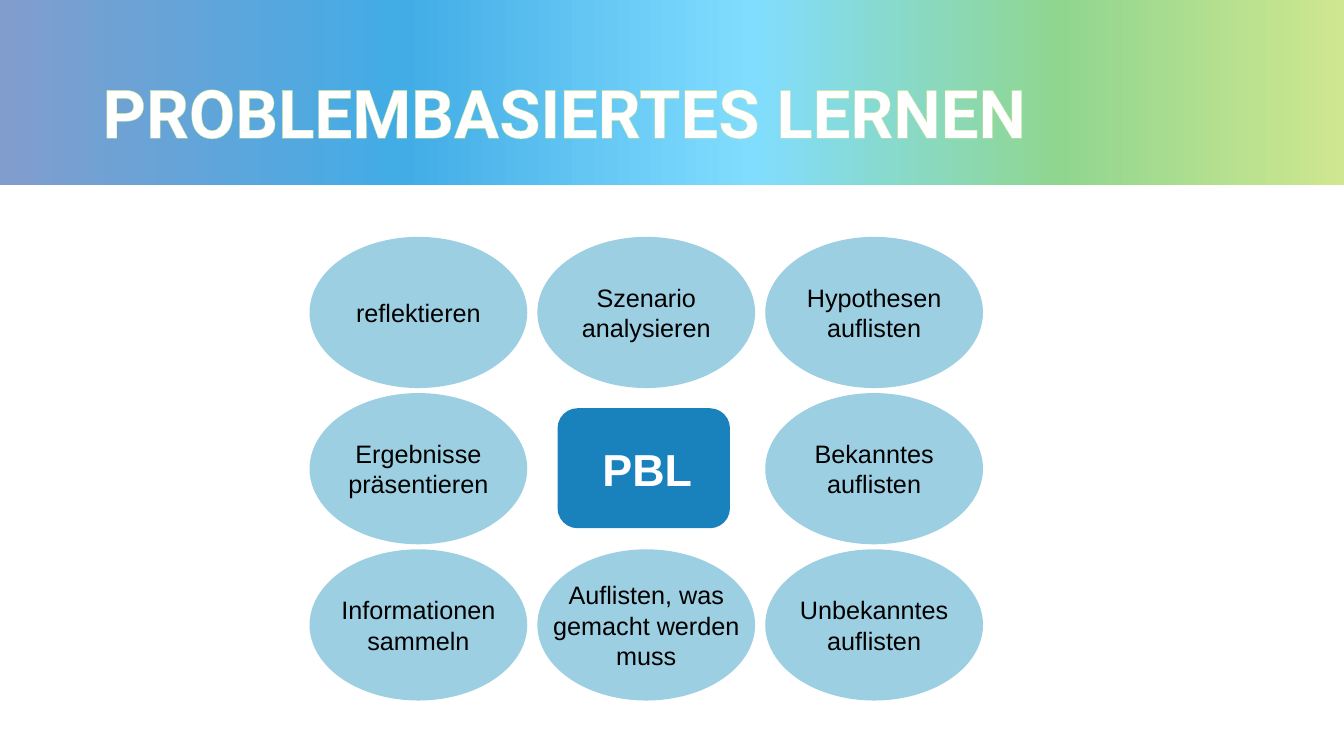
from lxml import etree
from pptx import Presentation
from pptx.dml.color import RGBColor
from pptx.enum.shapes import MSO_SHAPE as Shape
from pptx.enum.text import MSO_ANCHOR as Anchor, MSO_AUTO_SIZE as AutoSize, PP_ALIGN as Align
from pptx.oxml.ns import qn
from pptx.util import Inches, Pt

COLORS = {"white": "FFFFFF", "black": "000000", "center": "1982BD",
          "step": "9DCFE2", "outline": "BFE38F"}
BANNER_STOPS = [(0, "819DCD"), (30, "42ACE6"), (56, "81DDFF"),
                (79, "90D68F"), (100, "CFE78F")]
FORMATS = {
    "title": {"name": "Roboto", "size": Pt(48), "bold": True, "color": "white"},
    "center": {"name": "Arial", "size": Pt(32), "bold": True, "color": "white"},
    "step": {"name": "Arial", "size": Pt(18), "bold": False, "color": "black"},
}
STEPS = [
    (1, 0, "Szenario analysieren", 1.87, 0.71),
    (2, 0, "Hypothesen auflisten", 1.87, 0.71),
    (2, 1, "Bekanntes auflisten", 1.87, 0.71),
    (2, 2, "Unbekanntes auflisten", 1.87, 0.71),
    (1, 2, "Auflisten, was gemacht werden muss", 2.09, 1.01),
    (0, 2, "Informationen sammeln", 1.87, 0.71),
    (0, 1, "Ergebnisse präsentieren", 1.87, 0.71),
    (0, 0, "reflektieren", 1.87, 0.4),
]
GRID_LEFT, GRID_TOP, COLUMN_STEP, ROW_STEP = 3.07, 2.35, 2.26, 1.55
OVAL_WIDTH, OVAL_HEIGHT = 2.16, 1.5


class SlideBuilder:
    """Draw banner, title and labelled shapes on one slide in a shared style."""

    def __init__(self, slide):
        self.slide = slide

    def shape(self, shapes, kind, box):
        shape = shapes.add_shape(kind, *map(Inches, box))
        shape.shadow.inherit = False
        shape.line.fill.background()
        return shape

    def banner(self, box, stops):
        shape = self.shape(self.slide.shapes, Shape.RECTANGLE, box)
        shape.fill.gradient()
        shape.fill.gradient_angle = 0
        stop_list = next(shape.element.iter(qn("a:gsLst")))
        for old_stop in list(stop_list):
            stop_list.remove(old_stop)
        for position, color in stops:
            stop = etree.SubElement(stop_list, qn("a:gs"), pos=str(position * 1000))
            etree.SubElement(stop, qn("a:srgbClr"), val=color)

    def text(self, shapes, text, box, style, align=Align.CENTER, fit=AutoSize.SHAPE_TO_FIT_TEXT):
        frame = shapes.add_textbox(*map(Inches, box)).text_frame
        settings = {"word_wrap": True, "auto_size": fit, "vertical_anchor": Anchor.MIDDLE}
        for name, value in settings.items():
            setattr(frame, name, value)
        paragraph = frame.paragraphs[0]
        paragraph.alignment = align
        run = paragraph.add_run()
        run.text = text
        for name, value in FORMATS[style].items():
            if name == "color":
                run.font.color.rgb = RGBColor.from_string(COLORS[value])
            else:
                setattr(run.font, name, value)
        return paragraph, run

    def title(self, text, box):
        paragraph, run = self.text(self.slide.shapes, text, box, "title", Align.LEFT, AutoSize.NONE)
        paragraph.line_spacing = 0.9
        outline = etree.Element(qn("a:ln"), w=str(Pt(0.75)))
        fill = etree.SubElement(outline, qn("a:solidFill"))
        etree.SubElement(fill, qn("a:srgbClr"), val=COLORS["outline"])
        run.font._element.insert(0, outline)

    def node(self, kind, box, text, text_box, style):
        shapes = self.slide.shapes.add_group_shape().shapes
        shape = self.shape(shapes, kind, box)
        shape.fill.solid()
        shape.fill.fore_color.rgb = RGBColor.from_string(COLORS[style])
        self.text(shapes, text, text_box, style)

    def step(self, column, row, text, text_width, text_height):
        left = GRID_LEFT + column * COLUMN_STEP
        top = GRID_TOP + row * ROW_STEP
        text_left = left + (OVAL_WIDTH - text_width) / 2
        text_top = top + (OVAL_HEIGHT - text_height) / 2
        self.node(Shape.OVAL, (left, top, OVAL_WIDTH, OVAL_HEIGHT), text,
                  (text_left, text_top, text_width, text_height), "step")


def main():
    presentation = Presentation()
    presentation.slide_width = Inches(13.33)
    presentation.slide_height = Inches(7.5)
    builder = SlideBuilder(presentation.slides.add_slide(presentation.slide_layouts[6]))
    builder.banner((0, -0.08, 13.33, 1.92), BANNER_STOPS)
    builder.title("PROBLEMBASIERTES LERNEN", (0.92, 0.32, 11.5, 1.67))
    builder.node(Shape.ROUNDED_RECTANGLE, (5.53, 4.05, 1.71, 1.19), "PBL",
                 (5.59, 4.33, 1.66, 0.64), "center")
    for step in STEPS:
        builder.step(*step)
    presentation.save("out.pptx")


if __name__ == "__main__":
    main()
